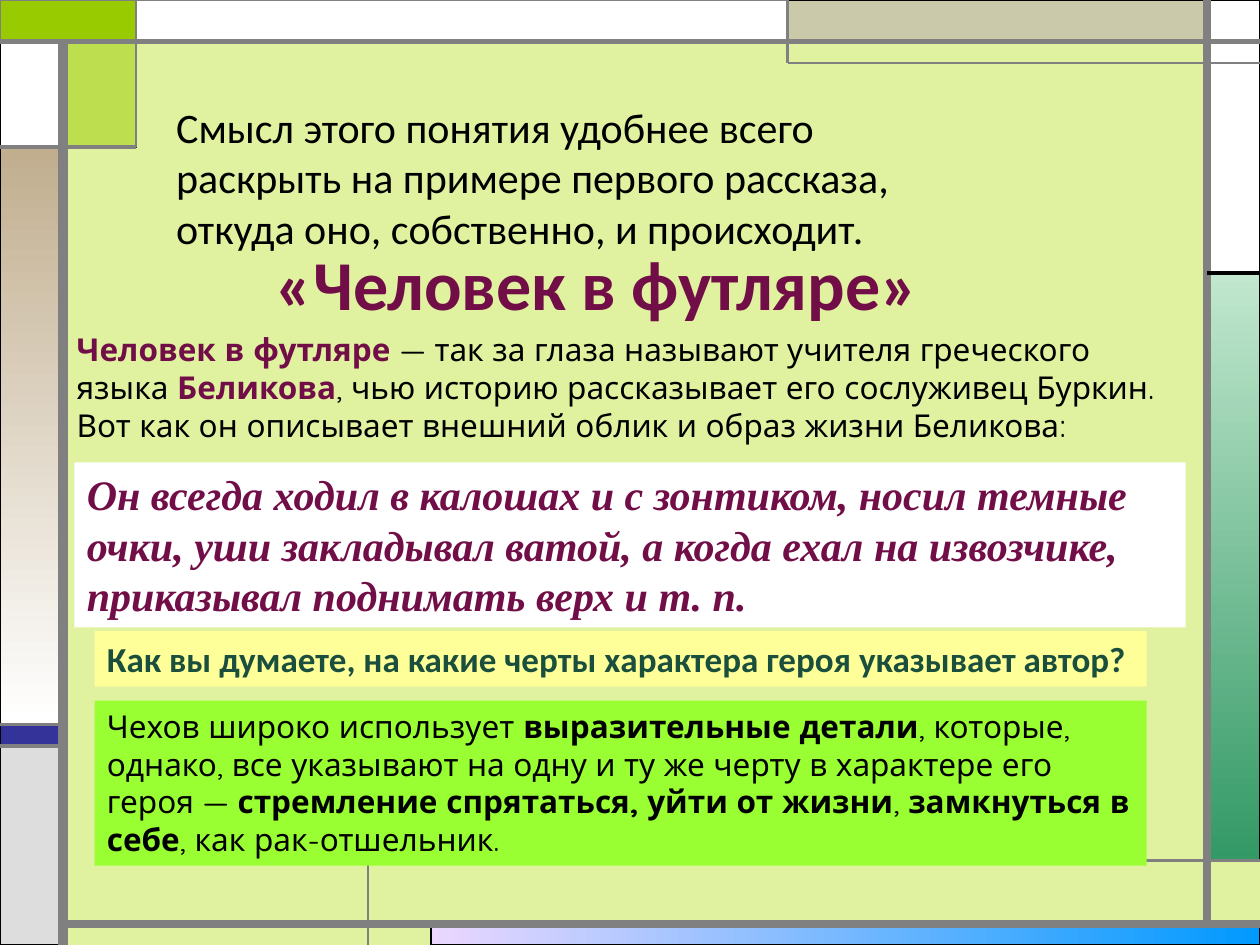
from lxml import etree
from pptx import Presentation
from pptx.dml.color import RGBColor
from pptx.enum import shapes, text
from pptx.oxml.ns import qn
from pptx.util import Inches, Pt

COLORS = {
    "page": "E0F2A0", "black": "000000", "white": "FFFFFF", "gray": "808080",
    "lilac": "EBD7FF", "blue": "0099FF", "mint": "C1E7CE", "green": "339966",
    "navy": "333399", "silver": "DDDDDD", "khaki": "CAC9AA", "olive": "99CC00",
    "tan": "C1AE8F", "wine": "720E47", "pine": "1A4E3D",
    "yellow": "FFFF99", "lime": "99FF33",
}

# Grid lines shared by the panels and the rules
LEFT, TAB, FOOT, HEAD, RIGHT, EDGE = 0.5, 1.08, 3.42, 6.25, 9.58, 10
TOP, SHOULDER, UPPER, BAND, BAND_END, LOWER, BASE, END = (
    0.33, 1.17, 2.17, 5.75, 5.92, 6.83, 7.33, 7.5)
STEM = 2.92

# left, top, right, bottom, fill (a pair is a gradient), gradient angle,
# opacity in percent, outline colour, outline width
PANELS = [
    (FOOT, BASE, EDGE, END, ("lilac", "blue"), 0, 100, "black", 0.75),
    (RIGHT, UPPER, EDGE, LOWER, ("mint", "green"), 270, 100, "black", 0.75),
    (0, BAND, LEFT, BAND_END, "navy", 0, 100, "black", 0.75),
    (0, BAND_END, LEFT, END, "silver", 0, 100, "black", 0.75),
    (RIGHT, 0, EDGE, UPPER, "white", 0, 100, "black", 0.75),
    (HEAD, 0, RIGHT, TOP, "khaki", 0, 100, "black", 0.75),
    (LEFT, TOP, TAB, SHOULDER, "olive", 0, 50, "black", 0.75),
    (0, SHOULDER, LEFT, BAND, ("tan", "white"), 270, 100, "black", 0.75),
    (0, TOP, LEFT, SHOULDER, "white", 0, 100, "black", 0.75),
    (0, 0, TAB, TOP, "olive", 0, 100, "gray", 1.5),
    (TAB, 0, HEAD, TOP, "white", 0, 100, "gray", 0.75),
]

# start x, start y, end x, end y, colour, width
RULES = [
    (LEFT, END, LEFT, TOP, "gray", 6),
    (LEFT, BASE, EDGE, BASE, "gray", 4.5),
    (RIGHT, BASE, RIGHT, 0, "gray", 4.5),
    (0, TOP, EDGE, TOP, "gray", 3),
    (EDGE, 0.5, HEAD, 0.5, "gray", 1.5),
    (HEAD, 0.5, HEAD, 0, "gray", 1.5),
    (RIGHT, UPPER, EDGE, UPPER, "black", 2.25),
    (TAB, 0, TAB, SHOULDER, "gray", 1.5),
    (TAB, SHOULDER, 0, SHOULDER, "gray", 2.25),
    (STEM, END, STEM, LOWER, "gray", 1.5),
    (STEM, LOWER, EDGE, LOWER, "gray", 1.5),
    (LEFT, BAND, 0, BAND, "gray", 2.25),
    (LEFT, BAND_END, 0, BAND_END, "gray", 2.25),
]

# Each span is (wording, colour, bold)
TEXTS = [
    dict(at=(1.3, 0.75, 6.34, 1.31), font="Calibri", size=24, middle=True, spans=[
        ("Смысл этого понятия удобнее всего раскрыть на примере первого рассказа, "
         "откуда оно, собственно, и происходит.", "black", False)]),
    dict(at=(2.09, 1.86, 5.35, 0.77), font="Calibri", size=40, wrap=False, spans=[
        ("«Человек в футляре»", "wine", True)]),
    dict(at=(0.51, 2.57, 8.98, 1.01), font="Quicksand", size=18, spans=[
        ("Человек в футляре ", "wine", True),
        ("— так за глаза называют учителя греческого языка ", "black", False),
        ("Беликова", "wine", True),
        (", чью историю рассказывает его сослуживец Буркин. Вот как он описывает "
         "внешний облик и образ жизни Беликова:", "black", False)]),
    dict(at=(0.59, 3.67, 8.82, 1.31), font="Times New Roman", size=24, italic=True,
         fill="white", spans=[
        ("Он всегда ходил в калошах и с зонтиком, носил темные очки, уши закладывал "
         "ватой, а когда ехал на извозчике, приказывал поднимать верх и т. п.",
         "wine", True)]),
    dict(at=(0.75, 5.01, 8.35, 0.44), font="Calibri", size=20, wrap=False,
         fill="yellow", spans=[
        ("Как вы думаете, на какие черты характера героя указывает автор?",
         "pine", True)]),
    dict(at=(0.75, 5.56, 8.35, 1.31), font="Quicksand", size=18, fill="lime", spans=[
        ("Чехов широко использует ", "black", False),
        ("выразительные детали", "black", True),
        (", которые, однако, все указывают на одну и ту же черту в характере его "
         "героя — ", "black", False),
        ("стремление спрятаться, уйти от жизни", "black", True),
        (", ", "black", False),
        ("замкнуться в себе", "black", True),
        (", как рак-отшельник.", "black", False)]),
]


def rgb(name):
    return RGBColor.from_string(COLORS[name])


def paint(fill, name):
    fill.solid()
    fill.fore_color.rgb = rgb(name)


def add_panel(page, left, top, right, bottom, fill, angle, opacity, outline, width):
    panel = page.shapes.add_shape(
        shapes.MSO_SHAPE.RECTANGLE,
        *map(Inches, (left, top, right - left, bottom - top)))
    panel.shadow.inherit = False
    if isinstance(fill, tuple):
        panel.fill.gradient()
        panel.fill.gradient_angle = angle
        for stop, name in zip(panel.fill.gradient_stops, fill):
            stop.color.rgb = rgb(name)
    else:
        paint(panel.fill, fill)
    if opacity < 100:
        color = panel.fill._xPr.find(qn("a:solidFill"))[0]
        etree.SubElement(color, qn("a:alpha"), val=str(opacity * 1000))
    panel.line.color.rgb = rgb(outline)
    panel.line.width = Pt(width)


def add_rule(page, x1, y1, x2, y2, color, width):
    rule = page.shapes.add_connector(
        shapes.MSO_CONNECTOR.STRAIGHT, *map(Inches, (x1, y1, x2, y2)))
    rule.line.color.rgb = rgb(color)
    rule.line.width = Pt(width)
    etree.SubElement(rule._element.spPr, qn("a:effectLst"))


def add_text(page, at, font, size, spans, fill=None, wrap=True, middle=False,
             italic=False):
    box = page.shapes.add_textbox(*map(Inches, at))
    if fill:
        paint(box.fill, fill)
    frame = box.text_frame
    frame.word_wrap = wrap
    frame.auto_size = text.MSO_AUTO_SIZE.SHAPE_TO_FIT_TEXT
    if middle:
        frame.vertical_anchor = text.MSO_ANCHOR.MIDDLE
    para = frame.paragraphs[0]
    para.font.name = font
    para.font.size = Pt(size)
    para.font.italic = italic
    for wording, color, bold in spans:
        span = para.add_run()
        span.text = wording
        span.font.color.rgb = rgb(color)
        span.font.bold = bold


def main():
    deck = Presentation()
    deck.slide_width, deck.slide_height = Inches(EDGE), Inches(END)
    page = deck.slides.add_slide(deck.slide_layouts[6])
    paint(page.background.fill, "page")
    for panel in PANELS:
        add_panel(page, *panel)
    for rule in RULES:
        add_rule(page, *rule)
    for item in TEXTS:
        add_text(page, **item)
    deck.save("out.pptx")


if __name__ == "__main__":
    main()
